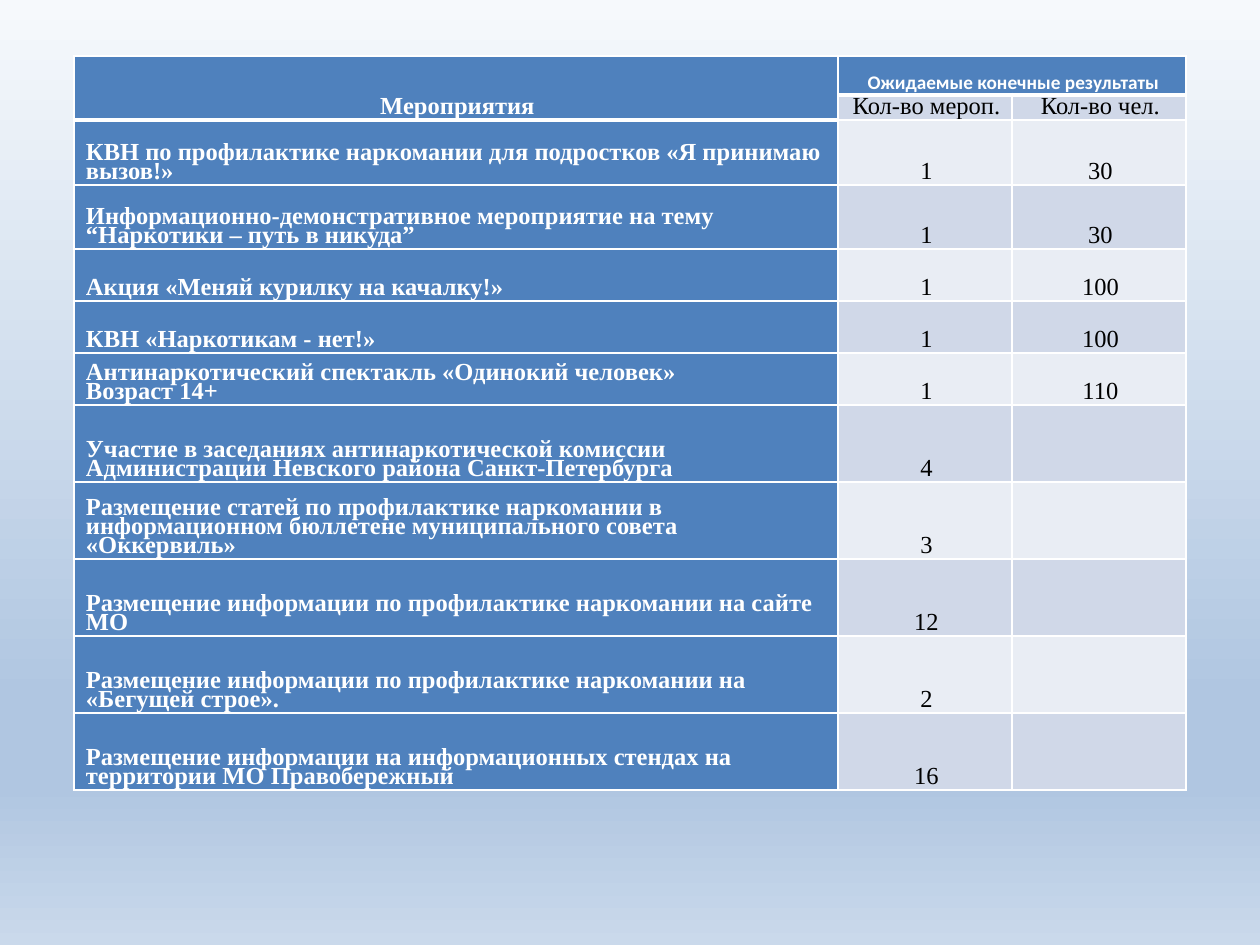
"""Build a slide with a table of drug prevention events and expected results."""
from lxml import etree
from pptx import Presentation, util as u
from pptx.dml.color import RGBColor
from pptx.enum import text
from pptx.oxml.ns import qn

HUES = {"head": "4F81BD", "odd": "D0D8E8", "even": "E9EDF4", "white": "FFFFFF",
        "black": "000000", "top": "F6F9FC", "mid": "B0C6E1", "low": "CAD9EB"}
STOPS = [(0, "top"), (74, "mid"), (83, "mid"), (100, "low")]
COLS = [764, 174, 174]
HIGHS = [39, 25, 65, 64] + [52] * 3 + [77] * 5
ROWS = [
    ("Мероприятия", "Ожидаемые конечные результаты", ""),
    ("", "Кол-во мероп.", "Кол-во чел."),
    ("КВН по профилактике наркомании для подростков «Я принимаю вызов!»", "1", "30"),
    ("Информационно-демонстративное мероприятие на тему “Наркотики – путь в никуда”", "1", "30"),
    ("Акция «Меняй курилку на качалку!»", "1", "100"),
    ("КВН «Наркотикам - нет!»", "1", "100"),
    ("Антинаркотический спектакль «Одинокий человек»\nВозраст 14+", "1", "110"),
    ("Участие в заседаниях антинаркотической комиссии Администрации Невского района Санкт-Петербурга", "4", ""),
    ("Размещение статей по профилактике наркомании в информационном бюллетене муниципального совета «Оккервиль»", "3", ""),
    ("Размещение информации по профилактике наркомании на сайте МО", "12", ""),
    ("Размещение информации по профилактике наркомании на «Бегущей строе».", "2", ""),
    ("Размещение информации на информационных стендах на территории МО Правобережный", "16", ""),
]
THICK = {"lnB": [(0, 0), (0, 1), (0, 2), (1, 0)], "lnT": [(1, 1), (1, 2), (2, 0)]}


def px(n):
    return round(n * 914400 / 126)


def paint(node, hue):
    fill = etree.SubElement(node, qn("a:solidFill"))
    etree.SubElement(fill, qn("a:srgbClr"), val=HUES[hue])


deck = Presentation()
deck.slide_width, deck.slide_height = px(1260), px(945)
slide = deck.slides.add_slide(deck.slide_layouts[6])

back = slide.background.fill
back.gradient()
back.gradient_angle = 270
stops = slide.element.xpath(".//a:gsLst")[0]
for old in list(stops):
    stops.remove(old)
for pos, hue in STOPS:
    stop = etree.SubElement(stops, qn("a:gs"), pos=str(pos * 1000))
    etree.SubElement(stop, qn("a:srgbClr"), val=HUES[hue])

frame = slide.shapes.add_table(len(ROWS), len(COLS), px(74), px(56), px(sum(COLS)), px(sum(HIGHS)))
table = frame.table
for col, wide in zip(table.columns, COLS):
    col.width = px(wide)
for row, high in zip(table.rows, HIGHS):
    row.height = px(high)

for r, row in enumerate(ROWS):
    for c, words in enumerate(row):
        cell = table.cell(r, c)
        head = r == 0 or c == 0
        cell.text = words
        cell.vertical_anchor = text.MSO_ANCHOR.BOTTOM
        cell.margin_left = cell.margin_right = px(9)
        cell.margin_top = cell.margin_bottom = 0
        for para in cell.text_frame.paragraphs:
            left = c == 0 and r > 1
            para.alignment = text.PP_ALIGN.LEFT if left else text.PP_ALIGN.CENTER
            para.line_spacing = u.Pt(11)
            para._p.get_or_add_pPr().set("marL", str(px(3)))
            small = r == 0 and c > 0
            para.font.name = "Calibri" if small else "Times New Roman"
            para.font.size = u.Pt(11 if small else 14)
            para.font.bold = head
            para.font.color.rgb = RGBColor.from_string(HUES["white" if head else "black"])
        props = cell._tc.get_or_add_tcPr()
        for side in ("lnL", "lnR", "lnT", "lnB"):
            wide = 3 if (r, c) in THICK.get(side, []) else 1
            paint(etree.SubElement(props, qn("a:" + side), w=str(u.Pt(wide))), "white")
        cell.fill.solid()
        tint = "head" if head else "odd" if r % 2 else "even"
        cell.fill.fore_color.rgb = RGBColor.from_string(HUES[tint])

table.cell(0, 0).merge(table.cell(1, 0))
table.cell(0, 1).merge(table.cell(0, 2))

deck.save("out.pptx")
